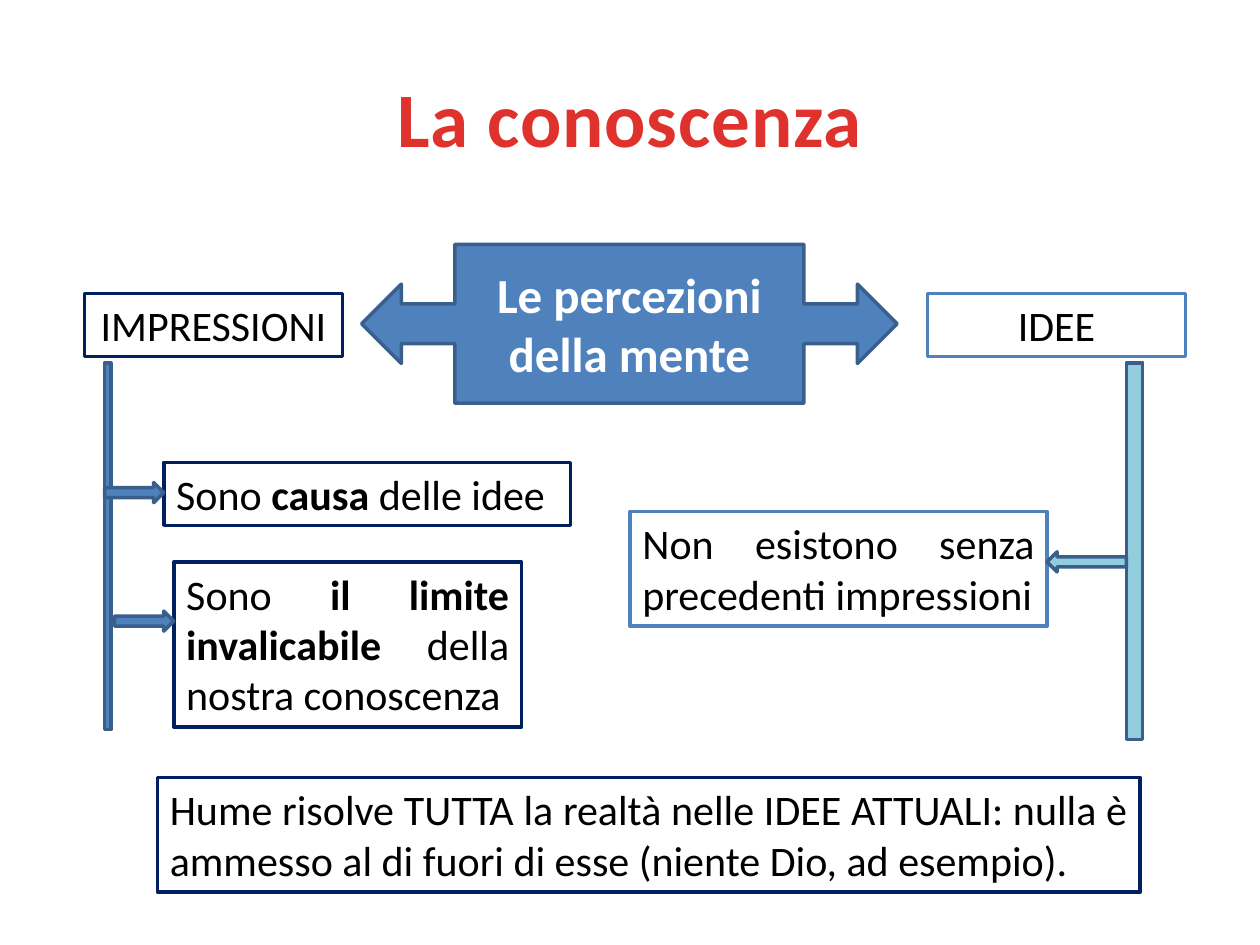
from pptx import Presentation
from pptx.dml.color import RGBColor
from pptx.enum import shapes, text
from pptx.util import Inches, Pt

HUES = {"red": "E0322D", "blue": "4F81BD", "edge": "3A5F8C", "navy": "002060",
        "aqua": "93CDDD", "white": "FFFFFF", "black": "000000"}
KIND = shapes.MSO_SHAPE
ALIGN = text.PP_ALIGN


def draw(kind, box, fill, line):
    """Add a filled, outlined shape without a shadow."""
    item = slide.shapes.add_shape(kind, *map(Inches, box))
    item.shadow.inherit = False
    item.fill.solid()
    item.fill.fore_color.rgb = RGBColor.from_string(HUES[fill])
    item.line.color.rgb = RGBColor.from_string(HUES[line])
    item.line.width = Pt(2)
    return item


def write(item, words, align, size, hue, bold=False):
    """Set one paragraph; parts between asterisks are bold."""
    item.text_frame.word_wrap = True
    para = item.text_frame.paragraphs[0]
    para.alignment = align
    for i, part in enumerate(words.split("*")):
        run = para.add_run()
        run.text = part
        look = {"name": "Calibri", "size": Pt(size), "bold": bold or i % 2 == 1}
        for key, value in look.items():
            setattr(run.font, key, value)
        run.font.color.rgb = RGBColor.from_string(HUES[hue])


deck = Presentation()
deck.slide_width, deck.slide_height = Inches(10), Inches(7.5)
slide = deck.slides.add_slide(deck.slide_layouts[5])

# Title
title = slide.shapes.title
place = {"left": 0.5, "top": 0.3, "width": 9, "height": 1.25}
for key, value in place.items():
    setattr(title, key, Inches(value))
title.text_frame.vertical_anchor = text.MSO_ANCHOR.MIDDLE
write(title, "La conoscenza", ALIGN.CENTER, 44, "red", True)
title.text_frame.paragraphs[0].runs[0].font._element.set("spc", "50")

# Central callout with two arrows
hub = draw(KIND.LEFT_RIGHT_ARROW_CALLOUT, (2.87, 1.94, 4.25, 1.26), "blue", "edge")
hub.adjustments[3] = 0.652
hub.text_frame.vertical_anchor = text.MSO_ANCHOR.MIDDLE
write(hub, "Le percezioni della mente", ALIGN.CENTER, 28, "white", True)

# Stems and their arrows
bars = [
    (KIND.RECTANGLE, (0.83, 2.88, 0.05, 2.91), "blue"),
    (KIND.RECTANGLE, (8.94, 2.88, 0.13, 2.99), "aqua"),
    (KIND.RIGHT_ARROW, (0.83, 3.83, 0.47, 0.16), "blue"),
    (KIND.LEFT_ARROW, (8.31, 4.38, 0.63, 0.16), "aqua"),
    (KIND.RIGHT_ARROW, (0.91, 4.85, 0.47, 0.16), "blue"),
]
# Framed texts
notes = [
    ((0.67, 2.33, 2.05, 0.5), "navy", ALIGN.CENTER, "IMPRESSIONI"),
    ((7.36, 2.33, 2.05, 0.5), "blue", ALIGN.CENTER, "IDEE"),
    ((1.3, 3.67, 3.23, 0.5), "navy", ALIGN.JUSTIFY, "Sono *causa* delle idee"),
    ((5, 4.06, 3.31, 0.91), "blue", ALIGN.JUSTIFY,
     "Non esistono senza precedenti impressioni"),
    ((1.38, 4.46, 2.76, 1.31), "navy", ALIGN.JUSTIFY,
     "Sono *il limite invalicabile *della nostra conoscenza"),
    ((1.25, 6.17, 7.8, 0.91), "navy", ALIGN.JUSTIFY,
     "Hume risolve TUTTA la realtà nelle IDEE ATTUALI: nulla è ammesso "
     "al di fuori di esse (niente Dio, ad esempio)."),
]
for box, line, align, words in notes:
    note = draw(KIND.RECTANGLE, box, "white", line)
    note.text_frame.vertical_anchor = text.MSO_ANCHOR.TOP
    note.text_frame.auto_size = text.MSO_AUTO_SIZE.SHAPE_TO_FIT_TEXT
    write(note, words, align, 24, "black")
for kind, box, fill in bars:
    draw(kind, box, fill, "edge")

deck.save("out.pptx")
